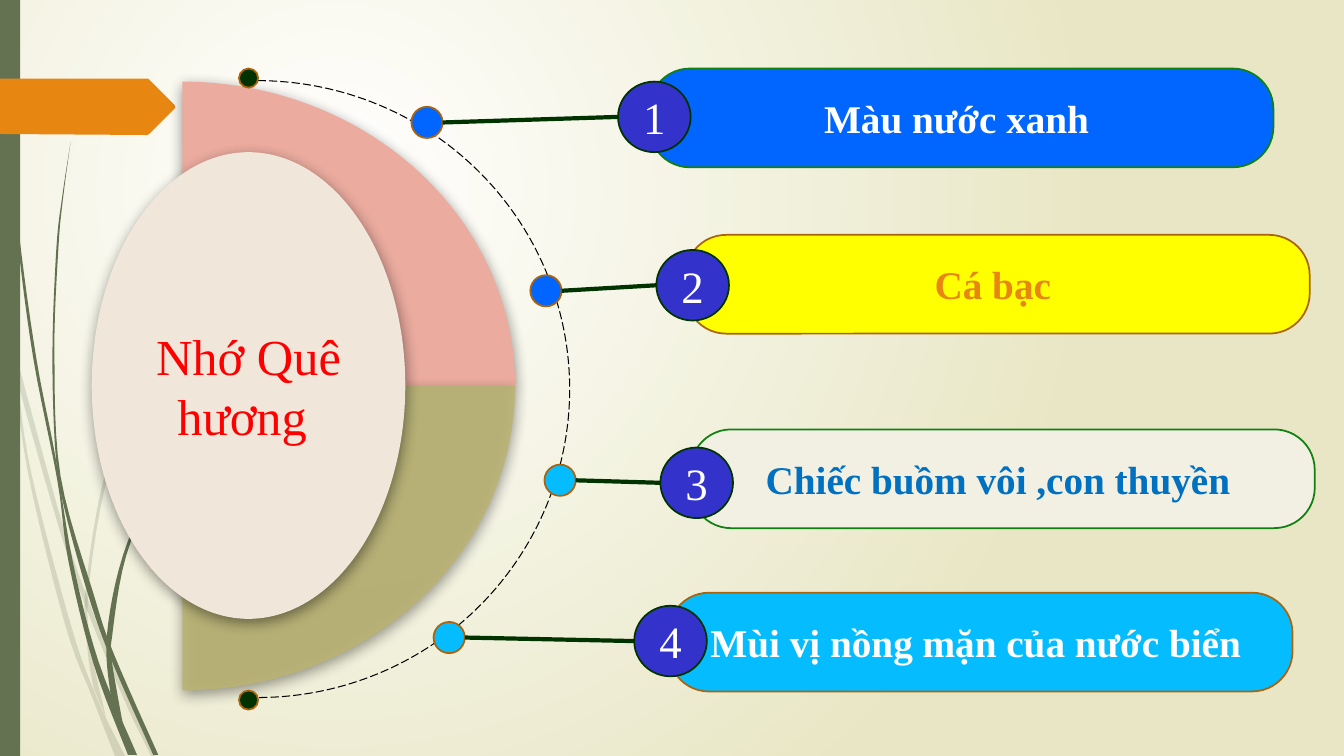
import math

from lxml import etree
from pptx import Presentation
from pptx.dml.color import RGBColor
from pptx.enum.dml import MSO_LINE
from pptx.enum.shapes import MSO_CONNECTOR, MSO_SHAPE
from pptx.enum.text import MSO_ANCHOR, PP_ALIGN
from pptx.oxml import parse_xml
from pptx.oxml.ns import nsdecls, qn
from pptx.util import Inches, Pt

CIRCLE = MSO_SHAPE.FLOWCHART_CONNECTOR
PILL = MSO_SHAPE.ROUNDED_RECTANGLE
FONT = "Times New Roman"

COLORS = {
    "moss": "647252", "orange": "E78712", "brown": "AB640D", "green": "108010",
    "forest": "003300", "blue": "0066FF", "sky": "05BCFE", "yellow": "FFFF00",
    "ivory": "F1F0E3", "indigo": "3333CC", "text_blue": "0070C0", "white": "FFFFFF",
    "black": "000000", "red": "FF0000", "pink": "EBAB9F", "olive": "BBB473",
    "cream": "F0E7DA", "sand": "E8E6C4",
}

TOPIC = "Nhớ Quê hương "
# label, fill, outline, text colour, pill corner, badge corner, dot corner, dot fill
IDEAS = [
    ("Màu nước xanh ", "blue", "green", "white", (6.44, 0.68), (6.13, 0.81), (4.08, 1.06), "blue"),
    ("Cá bạc ", "yellow", "brown", "orange", (6.8, 2.33), (6.51, 2.48), (5.26, 2.73), "blue"),
    ("Chiếc buồm vôi ,con thuyền ", "ivory", "green", "text_blue",
     (6.85, 4.26), (6.55, 4.44), (5.4, 4.61), "sky"),
    ("Mùi vị nồng mặn của nước biển ", "sky", "brown", "white",
     (6.63, 5.88), (6.29, 6.01), (4.3, 6.17), "sky"),
]
PILL_SIZE, BADGE_SIZE, DOT_SIZE, TIP_SIZE = (6.19, 0.98), (0.72, 0.7), (0.31, 0.31), (0.19, 0.19)
ARC_TIPS = [(2.37, 0.68), (2.37, 6.85)]
HUB, HUB_RADII = (1.81, 3.83), (3.3, 3.02)
WEDGES = [("pink", -1, 100), ("olive", 1, 87)]  # colour, vertical direction, opacity

ARROW = [(0, 0.78), (1.47, 0.78), (1.73, 1.04), (1.74, 1.06), (1.73, 1.08),
         (1.48, 1.33), (1.46, 1.34), (0, 1.33)]
# Opacity, left edge and right edge of each blade of grass
BLADES = [
    (20, [(0, 2.99), (0.11, 3.5), (0.28, 4.7), (0.65, 6.21), (0.92, 6.93), (1.14, 7.5)],
     [(0, 2.82), (0.09, 3.22), (0.17, 3.76), (0.31, 4.69), (0.7, 6.19), (0.96, 6.92), (1.24, 7.5)]),
    (20, [(0.14, 3.45), (0.17, 3.76), (0.58, 5.22), (0.84, 5.99), (1.23, 6.94), (1.5, 7.5)],
     [(0.14, 3.45), (0.62, 5.2), (0.92, 6.07), (1.27, 6.92), (1.55, 7.5)]),
    (20, [(3.12, 1.53), (2.68, 1.97), (2.28, 2.44), (1.58, 3.48), (1.07, 4.61), (0.85, 5.84),
          (0.87, 6.46), (0.93, 6.83)],
     [(3.12, 1.54), (2.68, 1.98), (2.29, 2.45), (1.6, 3.49), (1.1, 4.62), (0.88, 5.84),
      (0.91, 6.46), (1.05, 7.11)]),
    (100, [(0.03, 0), (0.07, 1.1), (0.17, 2.33), (0.33, 3.55), (0.57, 4.77), (0.68, 5.57),
           (0.93, 6.59), (1.27, 7.49)],
     [(0.04, 0), (0.08, 1.09), (0.19, 2.32), (0.36, 3.55), (0.55, 4.53), (0.72, 5.56),
      (0.98, 6.57), (1.36, 7.49)]),
    (100, [(0.7, 1.41), (0.62, 1.93), (0.56, 2.45), (0.52, 3.49), (0.55, 4.49), (0.64, 5.05),
           (0.88, 5.92), (1.11, 6.56), (1.52, 7.49)],
     [(0.7, 1.41), (0.63, 1.93), (0.58, 2.45), (0.54, 3.49), (0.6, 4.72), (0.93, 5.9),
      (1.13, 6.49), (1.57, 7.49)]),
    (100, [(2.6, 3.44), (2.31, 3.73), (2.04, 4.05), (1.56, 4.74), (1.22, 5.51), (1.06, 6.31),
           (1.1, 6.91), (1.17, 7.22)],
     [(2.61, 3.44), (2.31, 3.74), (2.05, 4.06), (1.58, 4.76), (1.25, 5.52), (1.11, 6.33),
      (1.11, 6.56), (1.22, 7.19)]),
]


def rgb(color):
    return RGBColor.from_string(COLORS[color])


def smooth(points, steps=6):
    """Return points along a Catmull-Rom curve through the given points."""
    padded = [points[0], *points, points[-1]]
    curve = [points[0]]
    for a, b, c, d in zip(padded, padded[1:], padded[2:], padded[3:]):
        for step in range(1, steps + 1):
            t = step / steps
            curve.append(tuple(
                (2 * q + (r - p) * t + (2 * p - 5 * q + 4 * r - s) * t ** 2
                 + (3 * q - p - 3 * r + s) * t ** 3) / 2
                for p, q, r, s in zip(a, b, c, d)))
    return curve


def paint(shape, fill, outline=None, opacity=100):
    shape.shadow.inherit = False
    shape.fill.solid()
    shape.fill.fore_color.rgb = rgb(fill)
    if opacity < 100:
        hue = shape.fill._xPr.find(qn("a:solidFill"))[0]
        etree.SubElement(hue, qn("a:alpha"), val=str(opacity * 1000))
    if outline:
        shape.line.color.rgb = rgb(outline)
        shape.line.width = Pt(1.25)
    else:
        shape.line.fill.background()
    return shape


def add_preset(slide, kind, corner, size, fill, outline=None):
    box = [Inches(value) for value in (*corner, *size)]
    return paint(slide.shapes.add_shape(kind, *box), fill, outline)


def add_outline(slide, points, fill, opacity=100):
    start, *rest = [(Inches(x), Inches(y)) for x, y in points]
    builder = slide.shapes.build_freeform(*start)
    builder.add_line_segments(rest, close=True)
    return paint(builder.convert_to_shape(), fill, opacity=opacity)


def cast_shadow(shape):
    effects = shape._element.spPr.find(qn("a:effectLst"))
    shadow = etree.SubElement(effects, qn("a:outerShdw"), blurRad=str(Pt(10)), dist=str(Pt(3)),
                              dir=str(82 * 60000), algn="ctr", rotWithShape="0")
    hue = etree.SubElement(shadow, qn("a:srgbClr"), val=COLORS["black"])
    etree.SubElement(hue, qn("a:alpha"), val="43000")


def write(shape, text, size, color, bold=False):
    frame = shape.text_frame
    frame.word_wrap = True
    frame.vertical_anchor = MSO_ANCHOR.MIDDLE
    paragraph = frame.paragraphs[0]
    paragraph.text = text
    paragraph.alignment = PP_ALIGN.CENTER
    font = paragraph.font
    font.name, font.size, font.bold = FONT, Pt(size), bold
    font.color.rgb = rgb(color)


def set_background(slide):
    slide._element.cSld.insert(0, parse_xml(
        f'<p:bg {nsdecls("p", "a")}><p:bgPr><a:gradFill rotWithShape="1"><a:gsLst>'
        f'<a:gs pos="0"><a:srgbClr val="{COLORS["white"]}"/></a:gs>'
        f'<a:gs pos="100000"><a:srgbClr val="{COLORS["sand"]}"/></a:gs></a:gsLst>'
        '<a:path path="circle"><a:fillToRect l="50000" t="50000" r="100000" b="100000"/></a:path>'
        '</a:gradFill><a:effectLst/></p:bgPr></p:bg>'))


def add_wedge(slide, color, direction, opacity):
    """Add a quarter ellipse right of the hub, above (-1) or below (1) it."""
    (x, y), (rx, ry) = HUB, HUB_RADII
    angles = [math.radians(degree) for degree in range(0, 91, 2)]
    rim = [(x + rx * math.cos(a), y + direction * ry * math.sin(a)) for a in angles]
    cast_shadow(add_outline(slide, [HUB, *rim], color, opacity))


def add_idea(slide, number, idea):
    label, fill, outline, text_color, pill_at, badge_at, dot_at, dot_fill = idea
    pill = add_preset(slide, PILL, pill_at, PILL_SIZE, fill, outline)
    pill.adjustments[0] = 0.41
    write(pill, label, 28, text_color, bold=True)
    add_preset(slide, CIRCLE, dot_at, DOT_SIZE, dot_fill, "brown")
    badge = add_preset(slide, CIRCLE, badge_at, BADGE_SIZE, "indigo", "forest")
    write(badge, str(number), 32, "white")
    start = (dot_at[0] + DOT_SIZE[0], dot_at[1] + DOT_SIZE[1] / 2)
    end = (badge_at[0], badge_at[1] + BADGE_SIZE[1] / 2)
    link = slide.shapes.add_connector(MSO_CONNECTOR.STRAIGHT, *map(Inches, start + end))
    link.line.color.rgb = rgb("forest")
    link.line.width = Pt(3)
    etree.SubElement(link._element.spPr, qn("a:effectLst"))


def main():
    deck = Presentation()
    deck.slide_width, deck.slide_height = Inches(13.33), Inches(7.5)
    slide = deck.slides.add_slide(deck.slide_layouts[6])
    set_background(slide)
    for opacity, left, right in BLADES:
        add_outline(slide, smooth(left) + smooth(right)[::-1], "moss", opacity)
    add_preset(slide, MSO_SHAPE.RECTANGLE, (0, 0), (0.2, 7.5), "moss")
    add_outline(slide, ARROW, "orange")
    for wedge in WEDGES:
        add_wedge(slide, *wedge)

    arc = add_preset(slide, MSO_SHAPE.ARC, (-0.54, 0.8), (6.19, 6.12), "white", "black")
    arc.fill.background()
    arc.line.width = Pt(0.75)
    arc.line.dash_style = MSO_LINE.LONG_DASH
    arc.adjustments[0], arc.adjustments[1] = 162, 54.17
    for tip in ARC_TIPS:
        add_preset(slide, CIRCLE, tip, TIP_SIZE, "forest", "brown")

    for number, idea in enumerate(IDEAS, 1):
        add_idea(slide, number, idea)
    topic = add_preset(slide, CIRCLE, (0.91, 1.51), (3.11, 4.63), "cream")
    cast_shadow(topic)
    write(topic, TOPIC, 36, "red")
    deck.save("out.pptx")


if __name__ == "__main__":
    main()
